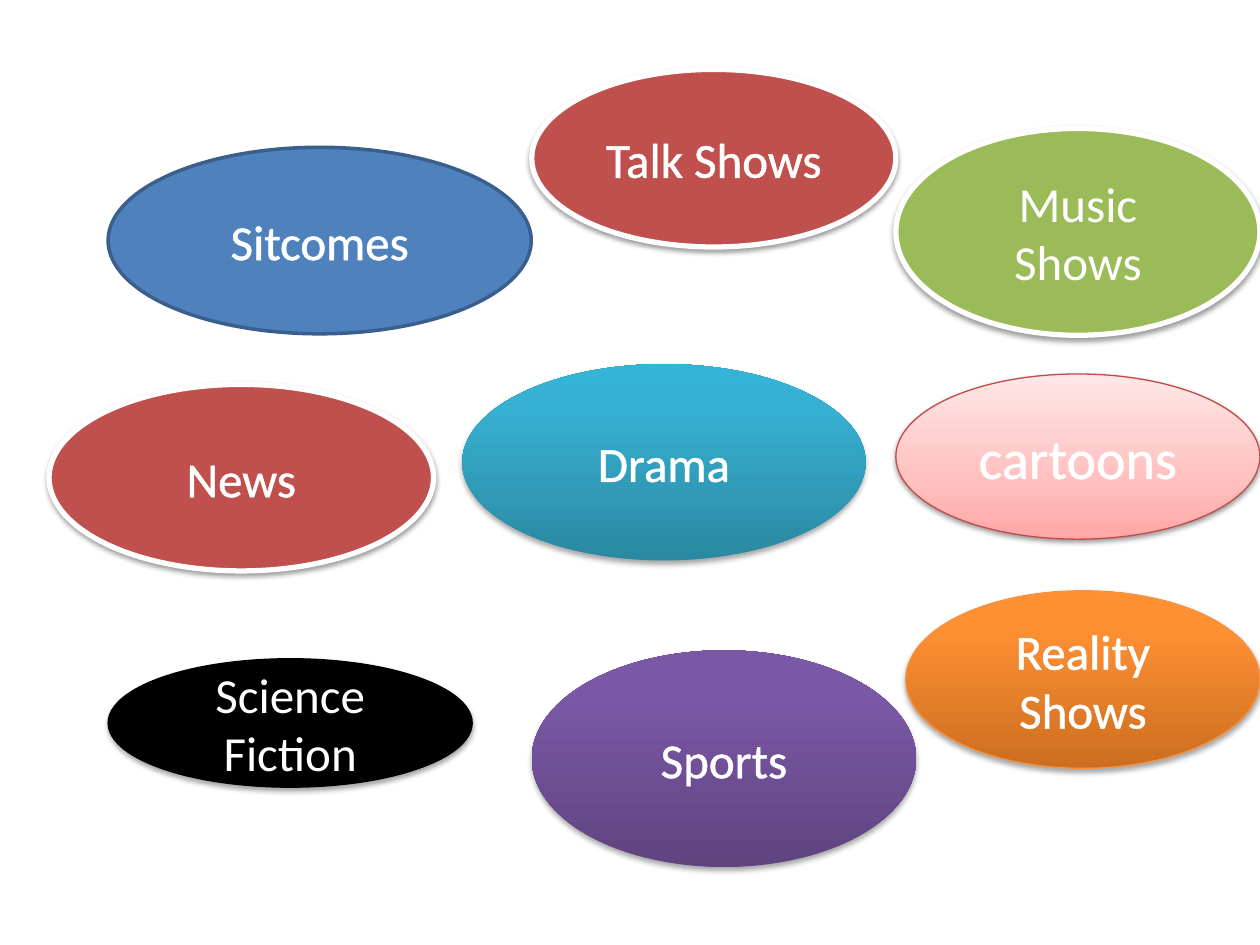
from copy import deepcopy

from lxml.etree import SubElement
from pptx import Presentation
from pptx.dml.color import RGBColor
from pptx.enum.shapes import MSO_SHAPE
from pptx.enum.text import MSO_ANCHOR, PP_ALIGN
from pptx.oxml.ns import qn
from pptx.util import Cm, Pt

WHITE = "FFFFFF"
BLACK = "000000"
SOFT = (35, 1.8)
DEEP = (38, 1.6)
TEAL = [(0, "2A88A2"), (0.8, "37B1D2"), (1, "34B4D6")]
PURPLE = [(0, "5F4480"), (0.8, "7B58A6"), (1, "7C57A8")]
ORANGE = [(0, "CC6E20"), (0.8, "FF9034"), (1, "FF9136")]
PINK = [(0, "FFA6A5"), (0.35, "FFC0BF"), (1, "FFE7E7")]

# label, box in cm, fill, line, shadow, text outline, size
SHOWS = [
    ("Drama", (9.32, 7.34, 8.13, 3.96), TEAL, None, SOFT, True, 28),
    ("Science Fiction", (2.18, 13.28, 7.34, 2.59), BLACK, (BLACK, 0.75), SOFT, False, 28),
    ("Sports", (10.72, 13.11, 7.75, 4.37), PURPLE, None, SOFT, True, 28),
    ("News", (0.99, 7.75, 7.75, 3.76), "C0504D", (WHITE, 3), DEEP, True, 28),
    ("Sitcomes", (2.18, 2.97, 8.53, 3.76), "4F81BD", ("3A5F8C", 2), None, True, 28),
    ("Music Shows", (18.06, 2.59, 7.34, 4.17), "9BBB59", (WHITE, 3), DEEP, False, 28),
    ("Reality Shows", (18.26, 11.91, 7.14, 3.58), ORANGE, ("F69240", 0.75), SOFT, True, 28),
    ("Talk Shows", (10.72, 1.4, 7.34, 3.58), "C0504D", (WHITE, 3), DEEP, True, 28),
    ("cartoons", (18.06, 7.54, 7.34, 3.33), PINK, ("BF4C48", 0.75), DEEP, True, 32),
]


def color(code):
    """Turn a hex string into a colour."""
    return RGBColor.from_string(code)


def paint(shape, fill):
    """Fill with one colour or with gradient stops rising from the bottom."""
    if isinstance(fill, str):
        shape.fill.solid()
        shape.fill.fore_color.rgb = color(fill)
        return
    shape.fill.gradient()
    shape.fill.gradient_angle = 90
    stops = next(shape._element.spPr.iter(qn("a:gsLst")))
    stops.append(deepcopy(stops[0]))
    for stop, (place, code) in zip(shape.fill.gradient_stops, fill):
        stop.position = place
        stop.color.rgb = color(code)


def edge(shape, line):
    """Draw the rim, or remove it."""
    if line is None:
        shape.line.fill.background()
        return
    code, width = line
    shape.line.color.rgb = color(code)
    shape.line.width = Pt(width)


def shade(shape, shadow):
    """Cast a soft black shadow straight down."""
    shape.shadow.inherit = False
    if shadow is None:
        return
    alpha, drop = shadow
    effects = shape._element.spPr.find(qn("a:effectLst"))
    outer = SubElement(effects, qn("a:outerShdw"), blurRad=str(Pt(3.1)),
                       dist=str(Pt(drop)), dir="5400000", rotWithShape="0")
    tint = SubElement(outer, qn("a:srgbClr"), val=BLACK)
    SubElement(tint, qn("a:alpha"), val=str(alpha * 1000))


def outline(run):
    """Give the letters a thin white outline."""
    props = run._r.get_or_add_rPr()
    line = SubElement(props, qn("a:ln"), w=str(Pt(1.45)))
    solid = SubElement(line, qn("a:solidFill"))
    SubElement(solid, qn("a:srgbClr"), val=WHITE)


def label(shape, text, size, lined):
    """Write the centred name of the show."""
    frame = shape.text_frame
    frame.word_wrap = True
    frame.vertical_anchor = MSO_ANCHOR.MIDDLE
    para = frame.paragraphs[0]
    para.alignment = PP_ALIGN.CENTER
    para.font.name = "Calibri"
    para.font.size = Pt(size)
    para.font.color.rgb = color(WHITE)
    run = para.add_run()
    run.text = text
    if lined:
        outline(run)


def bubble(slide, text, box, fill, line, shadow, lined, size):
    """Add one show as an ellipse."""
    shape = slide.shapes.add_shape(MSO_SHAPE.OVAL, *map(Cm, box))
    paint(shape, fill)
    edge(shape, line)
    shade(shape, shadow)
    label(shape, text, size, lined)


def main():
    """Build the slide of show types."""
    deck = Presentation()
    deck.slide_width, deck.slide_height = Cm(25.4), Cm(19.05)
    slide = deck.slides.add_slide(deck.slide_layouts[6])
    for show in SHOWS:
        bubble(slide, *show)
    deck.save("out.pptx")


if __name__ == "__main__":
    main()
